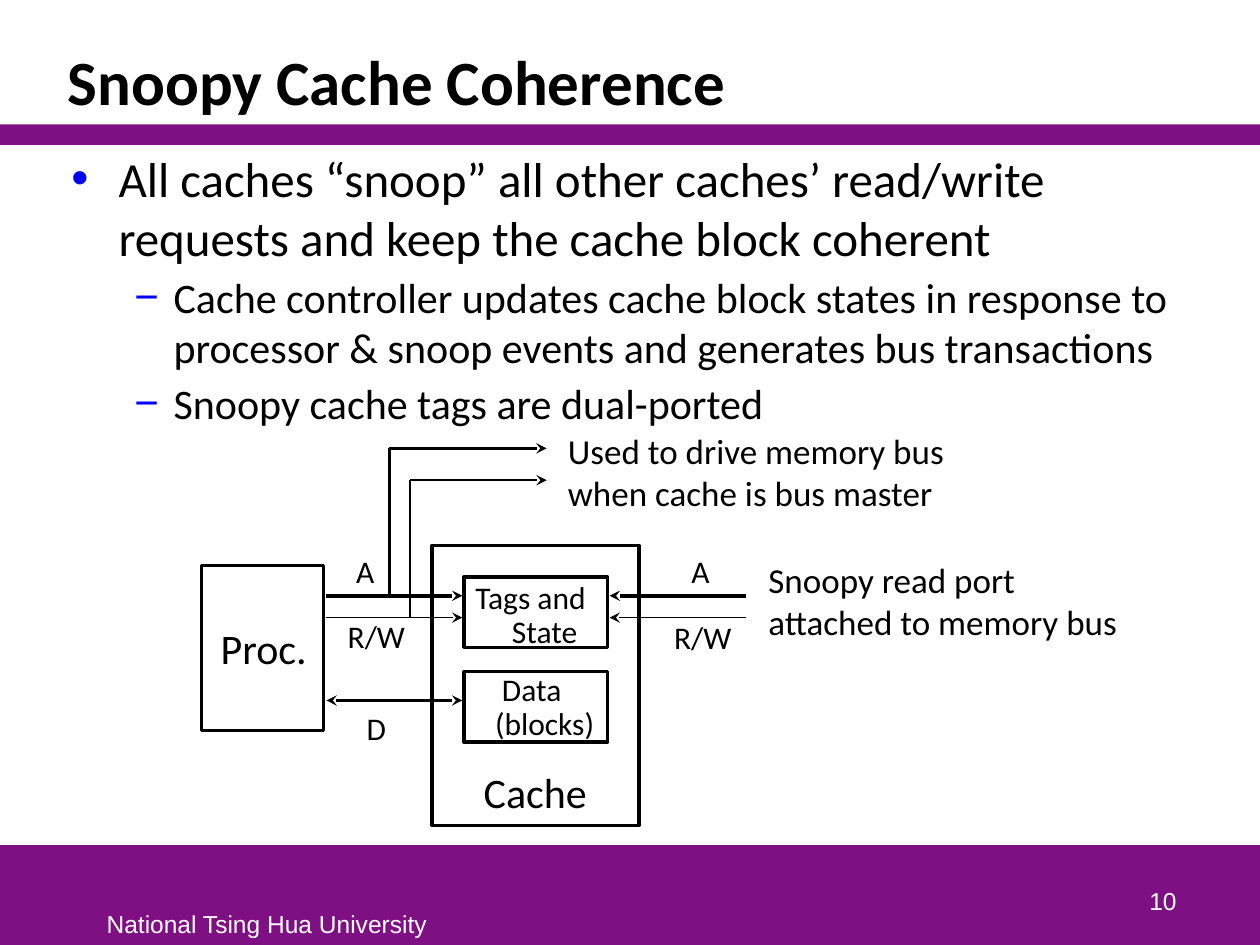
"""Build the Snoopy Cache Coherence slide with its cache block diagram."""
from dataclasses import dataclass

from lxml.etree import SubElement
from pptx import Presentation
from pptx.dml.color import RGBColor
from pptx.enum.shapes import MSO_CONNECTOR, MSO_SHAPE
from pptx.enum.text import MSO_ANCHOR, PP_ALIGN
from pptx.oxml.ns import qn
from pptx.util import Cm, Pt


@dataclass(frozen=True)
class Theme:
    purple: RGBColor = RGBColor(0x7F, 0x10, 0x84)
    black: RGBColor = RGBColor(0, 0, 0)
    white: RGBColor = RGBColor(255, 255, 255)
    bullet: str = "0000FF"
    body_font: str = "Calibri"
    footer_font: str = "Arial"
    bullet_font: str = "Arial"
    title: Pt = Pt(36)
    point: Pt = Pt(28)
    subpoint: Pt = Pt(24)
    caption: Pt = Pt(20)
    signal: Pt = Pt(18)
    footer: Pt = Pt(14)
    thick: Pt = Pt(2)
    thin: Pt = Pt(1)


theme = Theme()
deck = Presentation()
deck.slide_width, deck.slide_height = Cm(25.4), Cm(19.05)
slide = deck.slides.add_slide(deck.slide_layouts[6])
shapes = slide.shapes


def add_text(place, lines, size, wrap=False, anchor=MSO_ANCHOR.TOP, layout=None, **style):
    frame = shapes.add_textbox(*map(Cm, place)).text_frame
    frame.word_wrap, frame.vertical_anchor = wrap, anchor
    font_format = {"name": theme.body_font, "size": size, "bold": False} | style
    color = font_format.pop("color", theme.black)
    for index, line in enumerate(lines):
        paragraph = frame.paragraphs[0] if index == 0 else frame.add_paragraph()
        for name, value in (layout or {}).items():
            setattr(paragraph, name, value)
        run = paragraph.add_run()
        run.text = line
        for name, value in font_format.items():
            setattr(run.font, name, value)
        run.font.color.rgb = color
    return frame


def add_wire(start, end, width, **arrows):
    wire = shapes.add_connector(MSO_CONNECTOR.STRAIGHT, *map(Cm, start + end))
    wire.line.width = width
    wire.line.fill.solid()
    wire.line.fill.fore_color.rgb = theme.black
    outline = wire.line._get_or_add_ln()
    for end_name in ("headEnd", "tailEnd"):
        if arrows.get(end_name):
            SubElement(outline, qn(f"a:{end_name}"), type="stealth")
    SubElement(wire._element.spPr, qn("a:effectLst"))


for top, height in ((17.04, 2.01), (2.51, 0.41)):
    band = shapes.add_shape(MSO_SHAPE.RECTANGLE, 0, Cm(top), deck.slide_width, Cm(height))
    band.shadow.inherit = False
    band.fill.solid()
    band.fill.fore_color.rgb = theme.purple
    band.line.fill.background()

footer_style = {"name": theme.footer_font, "color": theme.white}
add_text((1.9, 18.21, 7.01, 0.84), ["National Tsing Hua University"], theme.footer, **footer_style)
add_text((18.69, 17.3, 5.28, 1.27), ["10"], theme.footer, wrap=True, anchor=MSO_ANCHOR.BOTTOM,
         layout={"alignment": PP_ALIGN.RIGHT}, **footer_style)
add_text((1.12, 0.64, 22.78, 1.88), ["Snoopy Cache Coherence"], theme.title, wrap=True,
         anchor=MSO_ANCHOR.BOTTOM, layout={"line_spacing": 0.85}, bold=True)

points = add_text((1.19, 2.87, 22.71, 14.05), [
    "All caches “snoop” all other caches’ read/write requests and keep the cache block coherent",
    "Cache controller updates cache block states in response to processor & snoop events"
    " and generates bus transactions",
    "Snoopy cache tags are dual-ported",
], theme.point, wrap=True)
bullet_levels = [(0, "•", 0.95, -0.95, theme.point)] + [(1, "−", 2.06, -0.79, theme.subpoint)] * 2
for paragraph, (level, mark, margin, indent, size) in zip(points.paragraphs, bullet_levels):
    paragraph.level = level
    paragraph.space_before = Pt(3 if level else 0)
    paragraph.runs[0].font.size = size
    properties = paragraph._p.get_or_add_pPr()
    properties.set("marL", str(Cm(margin)))
    properties.set("indent", str(Cm(indent)))
    SubElement(SubElement(properties, qn("a:buClr")), qn("a:srgbClr"), val=theme.bullet)
    SubElement(properties, qn("a:buFont"), typeface=theme.bullet_font)
    SubElement(properties, qn("a:buChar"), char=mark)

processor = (4.06, 11.4, 2.46, 3.33)
cache = (8.71, 11, 4.17, 5.64)
tags = (9.35, 11.63, 2.9, 1.42)
data = (9.35, 13.54, 2.9, 1.42)
for place in (processor, cache, tags, data):
    block = shapes.add_shape(MSO_SHAPE.RECTANGLE, *map(Cm, place))
    block.shadow.inherit = False
    block.fill.background()
    block.line.width = theme.thick
    block.line.color.rgb = theme.black

address_y, control_y, data_y = 12.01, 12.45, 14.12
processor_x, cache_x, snoop_x, bus_x = 6.58, 9.32, 12.29, 15.04
drive_x = 11.02
for y, width, tap_x, drive_y in ((address_y, theme.thick, 7.85, 9.04),
                                 (control_y, theme.thin, 8.26, 9.68)):
    add_wire((processor_x, y), (cache_x, y), width, tailEnd=True)
    add_wire((snoop_x, y), (bus_x, y), width, headEnd=True)
    add_wire((tap_x, y), (tap_x, drive_y), width)
    add_wire((tap_x, drive_y), (drive_x, drive_y), width, tailEnd=True)
add_wire((processor_x, data_y), (cache_x, data_y), theme.thick, headEnd=True, tailEnd=True)

for place, lines, size in (
    ((4.2, 12.42, 2.5, 1.3), ["Proc."], theme.subpoint),
    ((9.5, 15.32, 2.9, 1.3), ["Cache"], theme.subpoint),
    ((15.24, 11.13, 8.05, 1.96), ["Snoopy read port", "attached to memory bus"], theme.caption),
    ((11.2, 8.53, 8.23, 1.96), ["Used to drive memory bus", "when cache is bus master"], theme.caption),
    ((6.93, 11, 0.89, 1.02), ["A"], theme.signal),
    ((13.69, 11, 0.89, 1.02), ["A"], theme.signal),
    ((6.76, 12.32, 1.7, 1.02), ["R/W"], theme.signal),
    ((13.34, 12.34, 1.7, 1.02), ["R/W"], theme.signal),
    ((7.14, 14.17, 0.91, 1.02), ["D"], theme.signal),
):
    add_text(place, lines, size, wrap=size == theme.subpoint)

data_label = add_text((9.73, 13.46, 2.54, 1.65), ["Data", "(blocks)"], theme.signal,
                      layout={"line_spacing": 0.9})
tags_label = add_text((9.55, 11.73, 2.29, 1.4), ["Tags and", "State"], theme.signal,
                      anchor=MSO_ANCHOR.MIDDLE,
                      layout={"line_spacing": 0.9, "alignment": PP_ALIGN.CENTER})
for side in ("left", "top", "right", "bottom"):
    setattr(tags_label, f"margin_{side}", 0)
for paragraph, margin in ((data_label.paragraphs[0], 0.14), (tags_label.paragraphs[1], 0.57)):
    paragraph._p.get_or_add_pPr().set("marL", str(Cm(margin)))

deck.save("out.pptx")
